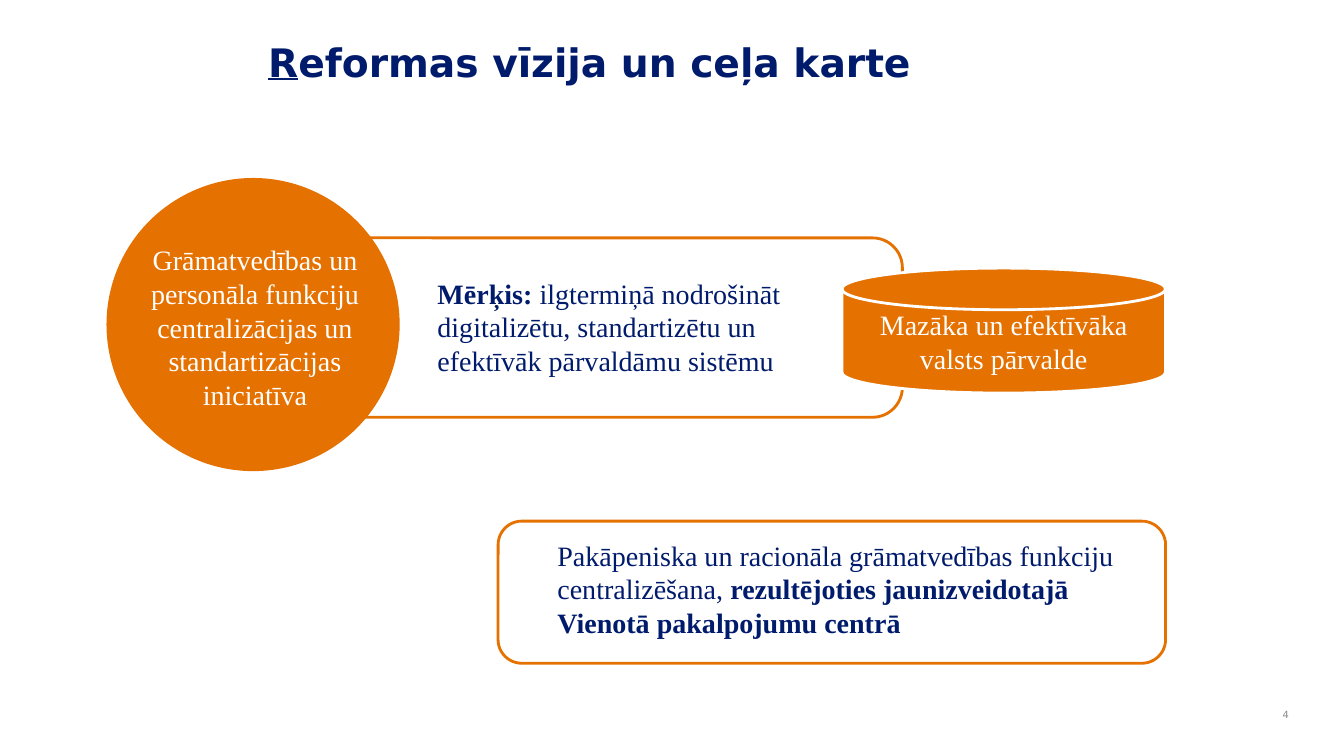
from pptx import Presentation
from pptx.dml.color import RGBColor
from pptx.enum.shapes import MSO_SHAPE
from pptx.enum.text import MSO_ANCHOR, MSO_AUTO_SIZE, PP_ALIGN
from pptx.util import Inches, Pt

ORANGE, NAVY, WHITE, GREY = "E57100", "001B6C", "FFFFFF", "898989"
SANS, SERIF = "DejaVu Sans", "Times New Roman"

# Each text is a list of paragraphs; each paragraph is a list of (text, style) runs.
TITLE = [[("R", "bu"), ("eformas vīzija un ceļa karte", "b")]]
INITIATIVE = [[("Grāmatvedības un personāla funkciju centralizācijas "
                "un standartizācijas iniciatīva", "")]]
GOAL = [[("Mērķis: ", "b"),
         ("ilgtermiņā nodrošināt digitalizētu, standartizētu un "
          "efektīvāk pārvaldāmu sistēmu", "")]]
RESULT = [[("Mazāka un efektīvāka", "")], [("valsts pārvalde", "")]]
APPROACH = [[("Pakāpeniska un racionāla grāmatvedības funkciju centralizēšana, ", ""),
             ("rezultējoties jaunizveidotajā Vienotā pakalpojumu centrā", "b")]]
PAGE_NUMBER = [[("4", "")]]


def color(value):
    return RGBColor.from_string(value)


def write(frame, paragraphs, size=20, font=SERIF, ink=NAVY,
          align=PP_ALIGN.LEFT, anchor=MSO_ANCHOR.TOP):
    """Fill a text frame; run styles use b for bold and u for underline."""
    frame.word_wrap = True
    frame.auto_size = MSO_AUTO_SIZE.NONE
    frame.vertical_anchor = anchor
    for index, runs in enumerate(paragraphs):
        paragraph = frame.add_paragraph() if index else frame.paragraphs[0]
        paragraph.alignment = align
        for text, style in runs:
            run = paragraph.add_run()
            run.text = text
            run.font.size = Pt(size)
            run.font.name = font
            run.font.color.rgb = color(ink)
            run.font.bold = "b" in style
            run.font.underline = "u" in style


def add_figure(slide, kind, box, line=ORANGE, fill=None):
    figure = slide.shapes.add_shape(kind, *map(Inches, box))
    figure.shadow.inherit = False
    figure.line.color.rgb = color(line)
    figure.line.width = Pt(2)
    if fill:
        figure.fill.solid()
        figure.fill.fore_color.rgb = color(fill)
    else:
        figure.fill.background()
    return figure


def add_text(slide, box, paragraphs, **style):
    write(slide.shapes.add_textbox(*map(Inches, box)).text_frame, paragraphs, **style)


def main():
    deck = Presentation()
    deck.slide_width, deck.slide_height = Inches(13.33), Inches(7.5)
    slide = deck.slides.add_slide(deck.slide_layouts[5])

    title = slide.shapes.title
    title.left, title.top, title.width, title.height = map(Inches, (2.56, 0.33, 7.53, 1.19))
    write(title.text_frame, TITLE, size=28, font=SANS)

    add_figure(slide, MSO_SHAPE.ROUNDED_RECTANGLE, (4.94, 5.17, 6.62, 1.41))
    add_figure(slide, MSO_SHAPE.ROUNDED_RECTANGLE, (2.7, 2.36, 6.25, 1.78))
    result = add_figure(slide, MSO_SHAPE.FLOWCHART_MAGNETIC_DISK,
                        (8.35, 2.66, 3.21, 1.24), line=WHITE, fill=ORANGE)
    write(result.text_frame, RESULT, ink=WHITE,
          align=PP_ALIGN.CENTER, anchor=MSO_ANCHOR.MIDDLE)
    add_text(slide, (4.24, 2.69, 3.85, 1.11), GOAL)
    add_text(slide, (5.43, 5.29, 5.83, 1.11), APPROACH)
    add_figure(slide, MSO_SHAPE.OVAL, (1.07, 1.78, 2.88, 2.88), fill=ORANGE)
    add_text(slide, (1.36, 2.36, 2.34, 1.78), INITIATIVE, ink=WHITE, align=PP_ALIGN.CENTER)
    add_text(slide, (12.44, 6.92, 0.44, 0.33), PAGE_NUMBER, size=7, font=SANS, ink=GREY,
             align=PP_ALIGN.RIGHT, anchor=MSO_ANCHOR.MIDDLE)

    deck.save("out.pptx")


if __name__ == "__main__":
    main()
